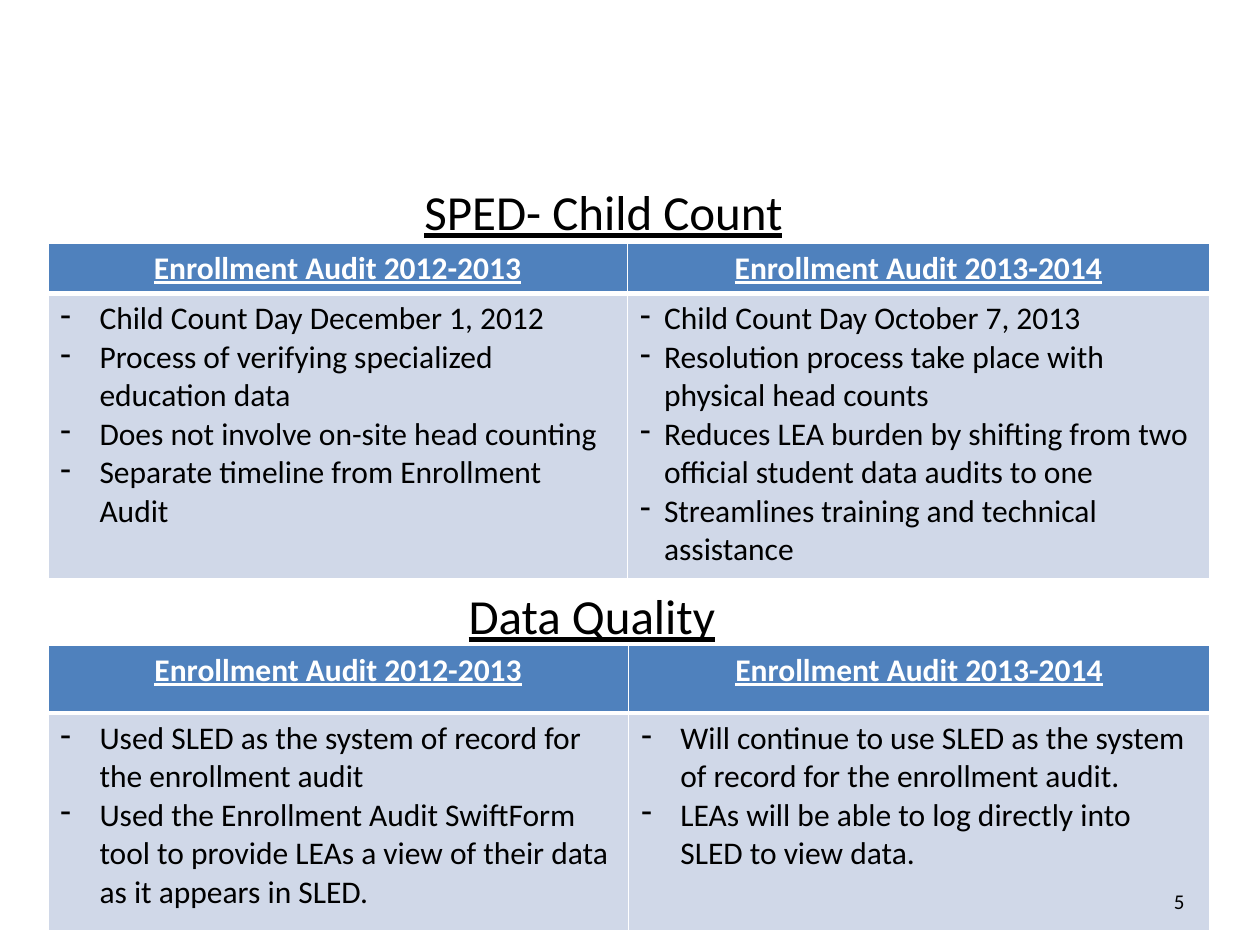
"""Build the enrollment audit comparison slide."""
from lxml.etree import SubElement
from pptx import Presentation
from pptx.dml.color import RGBColor
from pptx.enum.text import MSO_ANCHOR, MSO_AUTO_SIZE, PP_ALIGN
from pptx.oxml import parse_xml
from pptx.oxml.ns import nsdecls, qn
from pptx.util import Inches, Pt

BLACK, WHITE, BLUE, PALE = "000000", "FFFFFF", "4F81BD", "D0D8E8"
HEADERS = ["Enrollment Audit 2012-2013", "Enrollment Audit 2013-2014"]
CHILD_COUNT = [
    ["Child Count Day December 1, 2012",
     "Process of verifying specialized education data",
     "Does not involve on-site head counting",
     "Separate timeline from Enrollment Audit"],
    ["Child Count Day October 7, 2013",
     "Resolution process take place with physical head counts",
     "Reduces LEA burden by shifting from two official student data audits to one",
     "Streamlines training and technical assistance"],
]
DATA_QUALITY = [
    ["Used SLED as the system of record for the enrollment audit",
     "Used the Enrollment Audit SwiftForm tool to provide LEAs a view of their data "
     "as it appears in SLED."],
    ["Will continue to use SLED as the system of record for the enrollment audit.",
     "LEAs will be able to log directly into SLED to view data."],
]


def rgb(color):
    """Turn a hex string into a colour."""
    return RGBColor.from_string(color)


def style(p, size, color=BLACK, bold=False, underline=False):
    """Format every run of a paragraph."""
    for r in p.runs:
        font = r.font
        font.name, font.size = "Calibri", Pt(size)
        font.bold, font.underline = bold, underline
        font.color.rgb = rgb(color)


def add_text(s, text, box, size):
    """Add a one-line text box and return its frame."""
    tf = s.shapes.add_textbox(*map(Inches, box)).text_frame
    tf.text = text
    style(tf.paragraphs[0], size)
    return tf


def add_heading(s, text, box):
    """Add an underlined table heading that fits its text."""
    tf = add_text(s, text, box, 28)
    tf.word_wrap = False
    tf.auto_size = MSO_AUTO_SIZE.SHAPE_TO_FIT_TEXT
    style(tf.paragraphs[0], 28, underline=True)


def add_number(s, text, box):
    """Add the right-aligned slide number."""
    tf = add_text(s, text, box, 12)
    tf.word_wrap = True
    tf.vertical_anchor = MSO_ANCHOR.MIDDLE
    tf.paragraphs[0].alignment = PP_ALIGN.RIGHT


def add_dash(p, indent):
    """Give a paragraph a hanging dash bullet."""
    pPr = p._p.get_or_add_pPr()
    pPr.set("marL", str(Inches(indent)))
    pPr.set("indent", str(-Inches(indent)))
    SubElement(pPr, qn("a:buChar")).set("char", "-")


def format_cell(cell, fill, top, bottom):
    """Fill a cell and draw its white borders."""
    cell.fill.solid()
    cell.fill.fore_color.rgb = rgb(fill)
    tcPr = cell._tc.get_or_add_tcPr()
    for i, (side, width) in enumerate(zip("LRTB", (1, 1, top, bottom))):
        tcPr.insert(i, parse_xml(
            f'<a:ln{side} {nsdecls("a")} w="{Pt(width)}"><a:solidFill>'
            f'<a:srgbClr val="{WHITE}"/></a:solidFill></a:ln{side}>'))


def add_comparison(s, top, widths, heights, columns, indents):
    """Add a two-column table of dashed lists under year headers."""
    table = s.shapes.add_table(2, 2, Inches(0.38), Inches(top), Inches(sum(widths)),
                               Inches(sum(heights))).table
    for row, height in zip(table.rows, heights):
        row.height = Inches(height)
    for i, (header, items) in enumerate(zip(HEADERS, columns)):
        table.columns[i].width = Inches(widths[i])
        head, body = table.cell(0, i), table.cell(1, i)
        format_cell(head, BLUE, 1, 3)
        format_cell(body, PALE, 3, 1)
        head.text_frame.text = header
        p = head.text_frame.paragraphs[0]
        p.alignment = PP_ALIGN.CENTER
        style(p, 18, WHITE, bold=True, underline=True)
        body.text_frame.text = "\n".join(items)
        for p in body.text_frame.paragraphs:
            add_dash(p, indents[i])
            style(p, 18)


def main():
    """Build and save the slide."""
    prs = Presentation()
    prs.slide_width, prs.slide_height = Inches(10), Inches(7.5)
    s = prs.slides.add_slide(prs.slide_layouts[6])
    add_heading(s, "SPED- Child Count", (3.27, 1.39, 3.2, 0.57))
    add_comparison(s, 1.93, (4.6, 4.62), (0.36, 2.26), CHILD_COUNT, (0.31, 0.19))
    add_comparison(s, 5.12, (4.61, 4.61), (0.54, 1.73), DATA_QUALITY, (0.31, 0.31))
    add_heading(s, "Data Quality", (3.62, 4.6, 2.18, 0.57))
    add_number(s, "5", (7.17, 6.95, 2.33, 0.4))
    prs.save("out.pptx")


if __name__ == "__main__":
    main()
